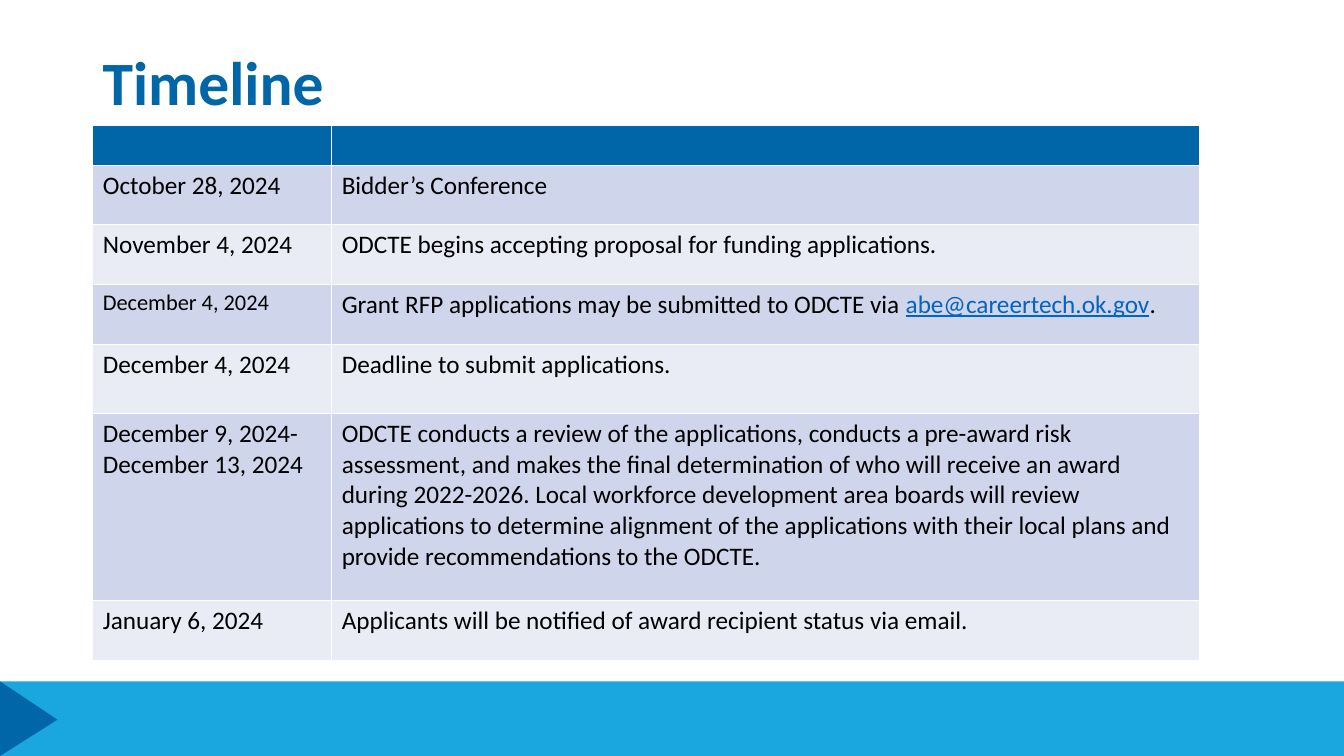
from pptx import Presentation
from pptx.dml.color import RGBColor
from pptx.enum.shapes import MSO_SHAPE as Shape
from pptx.enum.text import MSO_ANCHOR as Anchor
from pptx.util import Inches, Pt

WIDTH, HEIGHT = 13.33, 7.5
FONT = "Calibri"
NAVY, SKY, BLACK, LINK = "0066A8", "1AA6DF", "000000", "0563C1"
BANDS = "CFD5EA", "E9EBF5"
TITLE = "Timeline"
EMAIL = "abe@careertech.ok.gov"
SMALL_DATE_ROW = 3
COLUMNS = 2.37, 8.61
ROWS = [
    (0.38, "", []),
    (0.59, "October 28, 2024", ["Bidder’s Conference"]),
    (0.59, "November 4, 2024", ["ODCTE begins accepting proposal for funding applications."]),
    (0.6, "December 4, 2024", ["Grant RFP applications may be submitted to ODCTE via ", EMAIL, "."]),
    (0.68, "December 4, 2024", ["Deadline to submit applications."]),
    (1.86, "December 9, 2024- December 13, 2024", [
        "ODCTE conducts a review of the applications, conducts a pre-award risk assessment, "
        "and makes the final determination of who will receive an award during 2022-2026. "
        "Local workforce development area boards will review applications to determine "
        "alignment of the applications with their local plans and provide recommendations "
        "to the ODCTE."]),
    (0.59, "January 6, 2024", ["Applicants will be notified of award recipient status via email."]),
]
LEFT, TABLE_TOP = 0.92, 1.24
FOOTER_HEIGHT = 0.74
ARROW_DEPTH = 0.57


def color(value):
    return RGBColor.from_string(value)


def add_span(para, text, size, ink, bold=False, underline=False):
    span = para.add_run()
    span.text = text
    font = span.font
    font.name, font.size, font.bold = FONT, Pt(size), bold
    font.color.rgb = color(ink)
    if underline:
        font.underline = True


def add_block(page, kind, left, top, width, height, fill):
    block = page.shapes.add_shape(kind, *map(Inches, (left, top, width, height)))
    block.shadow.inherit = False
    block.fill.solid()
    block.fill.fore_color.rgb = color(fill)
    block.line.fill.background()
    return block


def add_footer(page):
    top = HEIGHT - FOOTER_HEIGHT
    add_block(page, Shape.RECTANGLE, 0, top, WIDTH, FOOTER_HEIGHT, SKY)
    inset = (FOOTER_HEIGHT - ARROW_DEPTH) / 2
    arrow = add_block(page, Shape.ISOSCELES_TRIANGLE, -inset, top + inset,
                      FOOTER_HEIGHT, ARROW_DEPTH, NAVY)
    arrow.adjustments[0] = 0.514
    arrow.rotation = 90


def add_title(page):
    box = page.shapes.add_textbox(*map(Inches, (LEFT, 0.12, 11.5, 1.45)))
    frame = box.text_frame
    frame.word_wrap = True
    frame.vertical_anchor = Anchor.MIDDLE
    para = frame.paragraphs[0]
    para.line_spacing = 0.9
    add_span(para, TITLE, 44, NAVY, bold=True)


def add_timeline(page):
    size = sum(COLUMNS), sum(height for height, _, _ in ROWS)
    table = page.shapes.add_table(len(ROWS), len(COLUMNS),
                                  *map(Inches, (LEFT, TABLE_TOP, *size))).table
    for column, width in zip(table.columns, COLUMNS):
        column.width = Inches(width)
    for index, (height, date, event) in enumerate(ROWS):
        table.rows[index].height = Inches(height)
        fill = BANDS[(index - 1) % 2] if index else NAVY
        date_size = 16 if index == SMALL_DATE_ROW else 18
        for place, (texts, points) in enumerate((([date], date_size), (event, 18))):
            cell = table.cell(index, place)
            cell.fill.solid()
            cell.fill.fore_color.rgb = color(fill)
            for text in filter(None, texts):
                linked = text == EMAIL
                add_span(cell.text_frame.paragraphs[0], text, points,
                         LINK if linked else BLACK, underline=linked)


def main():
    """Build the timeline slide and save it."""
    deck = Presentation()
    deck.slide_width, deck.slide_height = Inches(WIDTH), Inches(HEIGHT)
    page = deck.slides.add_slide(deck.slide_layouts[6])
    add_footer(page)
    add_title(page)
    add_timeline(page)
    deck.save("out.pptx")


if __name__ == "__main__":
    main()
